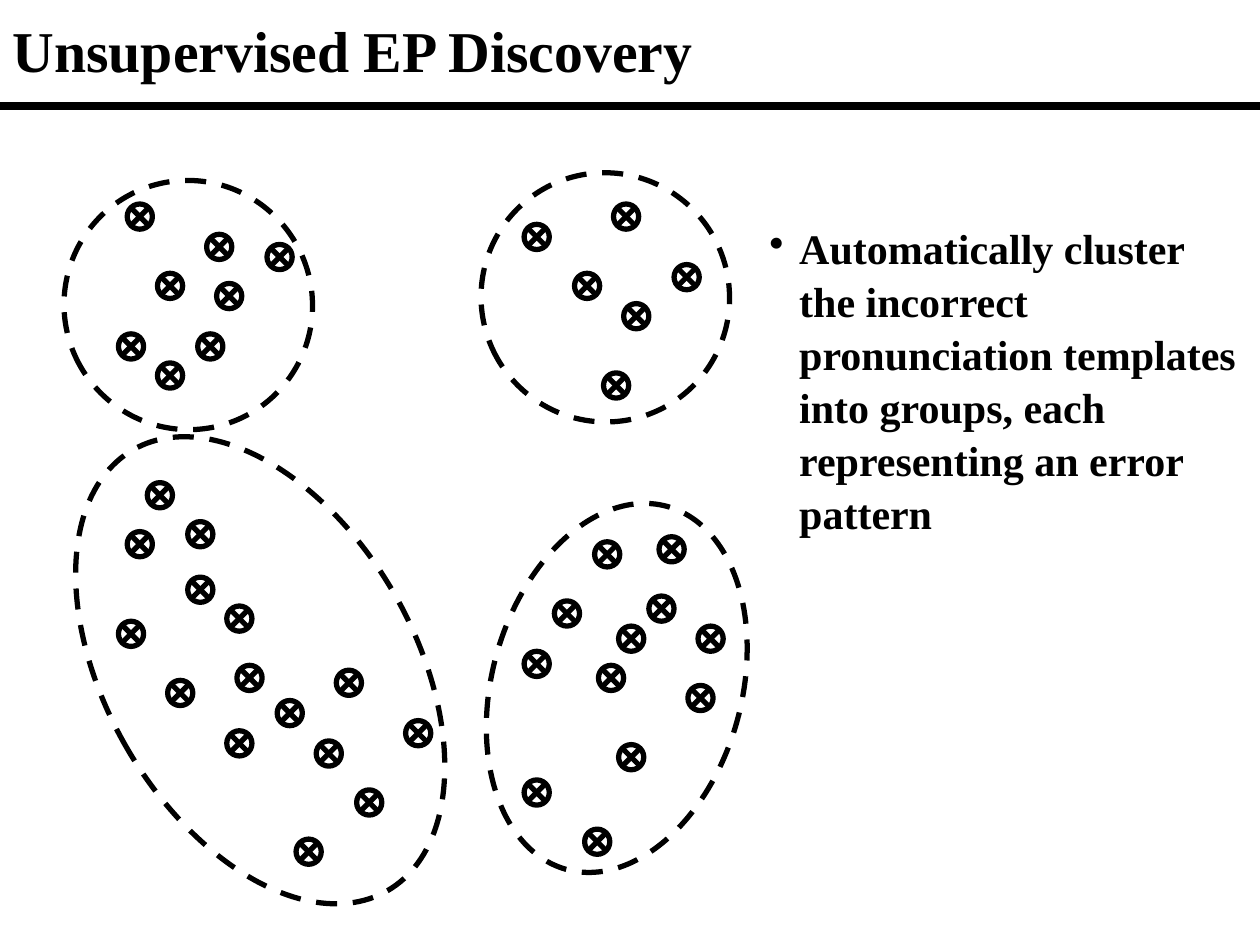
from lxml.etree import SubElement
from pptx import Presentation
from pptx.dml.color import RGBColor
from pptx.enum.dml import MSO_LINE
from pptx.enum.shapes import MSO_CONNECTOR, MSO_SHAPE
from pptx.enum.text import MSO_ANCHOR, PP_ALIGN
from pptx.oxml.ns import qn
from pptx.util import Pt

BLACK = RGBColor(0x00, 0x00, 0x00)
FONT = "Times New Roman"
MARKER_SIZE = 14.4

# Each cluster: outline (left, top, width, height, rotation) and the
# left and top of its markers, in points.
CLUSTERS = [
    ((36.7, 103, 141.8, 142.6, 330),
     [(72.7, 116.6), (118.1, 133.9), (152.6, 139.7), (90, 156.2),
      (123.8, 162), (67.7, 190.8), (113, 190.8), (90, 207.4)]),
    ((275, 98.6, 141.8, 142.6, 330),
     [(350.6, 116.6), (299.5, 128.2), (385.2, 151.2), (328.3, 156.2),
      (356.4, 173.5), (344.9, 213.1)]),
    ((60.5, 237.6, 176.4, 290.9, 330),
     [(84.2, 275.8), (107.3, 298.1), (72.7, 303.8), (107.3, 329.8),
      (129.6, 346.3), (67.7, 355), (135.4, 380.2), (95.8, 388.8),
      (192.2, 383), (158.4, 400.3), (129.6, 417.6), (180.7, 423.4),
      (231.8, 411.8), (203.8, 451.4), (169.2, 479.5)]),
    ((244.8, 321.8, 215.3, 142.6, 285.6),
     [(339.8, 309.6), (376.6, 306.7), (316.8, 343.4), (370.8, 340.6),
      (353.5, 357.8), (398.9, 357.8), (299.5, 372.2), (342, 380.2),
      (393.1, 391.7), (353.5, 425.5), (299.5, 445.7), (334.1, 473.8)]),
]


def place(sp, left, top, width, height):
    sp.left, sp.top, sp.width, sp.height = map(Pt, (left, top, width, height))


def write(sp, text, size, anchor=MSO_ANCHOR.TOP, spacing=1.0):
    tf = sp.text_frame
    tf.word_wrap = True
    tf.vertical_anchor = anchor
    p = tf.paragraphs[0]
    p.alignment = PP_ALIGN.LEFT
    p.line_spacing = spacing
    r = p.add_run()
    r.text = text
    r.font.name = FONT
    r.font.size = Pt(size)
    r.font.bold = True
    r.font.color.rgb = BLACK
    return p


def add_bullet(p, indent, hanging):
    pPr = p._p.get_or_add_pPr()
    pPr.set("marL", str(Pt(indent)))
    pPr.set("indent", str(-Pt(hanging)))
    SubElement(pPr, qn("a:buChar"), char="•")


def add_rule(s, y, width):
    rule = s.shapes.add_connector(MSO_CONNECTOR.STRAIGHT, 0, Pt(y), Pt(width), Pt(y))
    rule.line.color.rgb = BLACK
    rule.line.width = Pt(4.5)
    SubElement(rule._element.spPr, qn("a:effectLst"))


def add_outline(group, kind, left, top, width, height):
    """Add an unfilled shape with a black line."""
    sp = group.shapes.add_shape(kind, *map(Pt, (left, top, width, height)))
    sp.shadow.inherit = False
    sp.fill.background()
    sp.line.color.rgb = BLACK
    sp.line.width = Pt(3)
    return sp


def add_cluster(s, outline, markers):
    group = s.shapes.add_group_shape()
    for left, top in markers:
        add_outline(group, MSO_SHAPE.FLOWCHART_SUMMING_JUNCTION,
                    left, top, MARKER_SIZE, MARKER_SIZE)
    *box, rotation = outline
    ellipse = add_outline(group, MSO_SHAPE.OVAL, *box)
    ellipse.rotation = rotation
    ellipse.line.dash_style = MSO_LINE.DASH


def main():
    prs = Presentation()
    prs.slide_width, prs.slide_height = Pt(720), Pt(540)
    s = prs.slides.add_slide(prs.slide_layouts[5])

    add_rule(s, 60.5, 720)
    title = s.shapes.title
    place(title, 0, 0, 720, 56.9)
    write(title, "Unsupervised EP Discovery", 33, anchor=MSO_ANCHOR.MIDDLE)

    for outline, markers in CLUSTERS:
        add_cluster(s, outline, markers)

    note = s.shapes.add_textbox(Pt(422.6), Pt(122.4), Pt(292.4), Pt(181.4))
    p = write(note, "Automatically cluster the incorrect pronunciation templates "
                    "into groups, each representing an error pattern",
              24, spacing=1.05)
    add_bullet(p, indent=27, hanging=17)

    prs.save("out.pptx")


if __name__ == "__main__":
    main()
